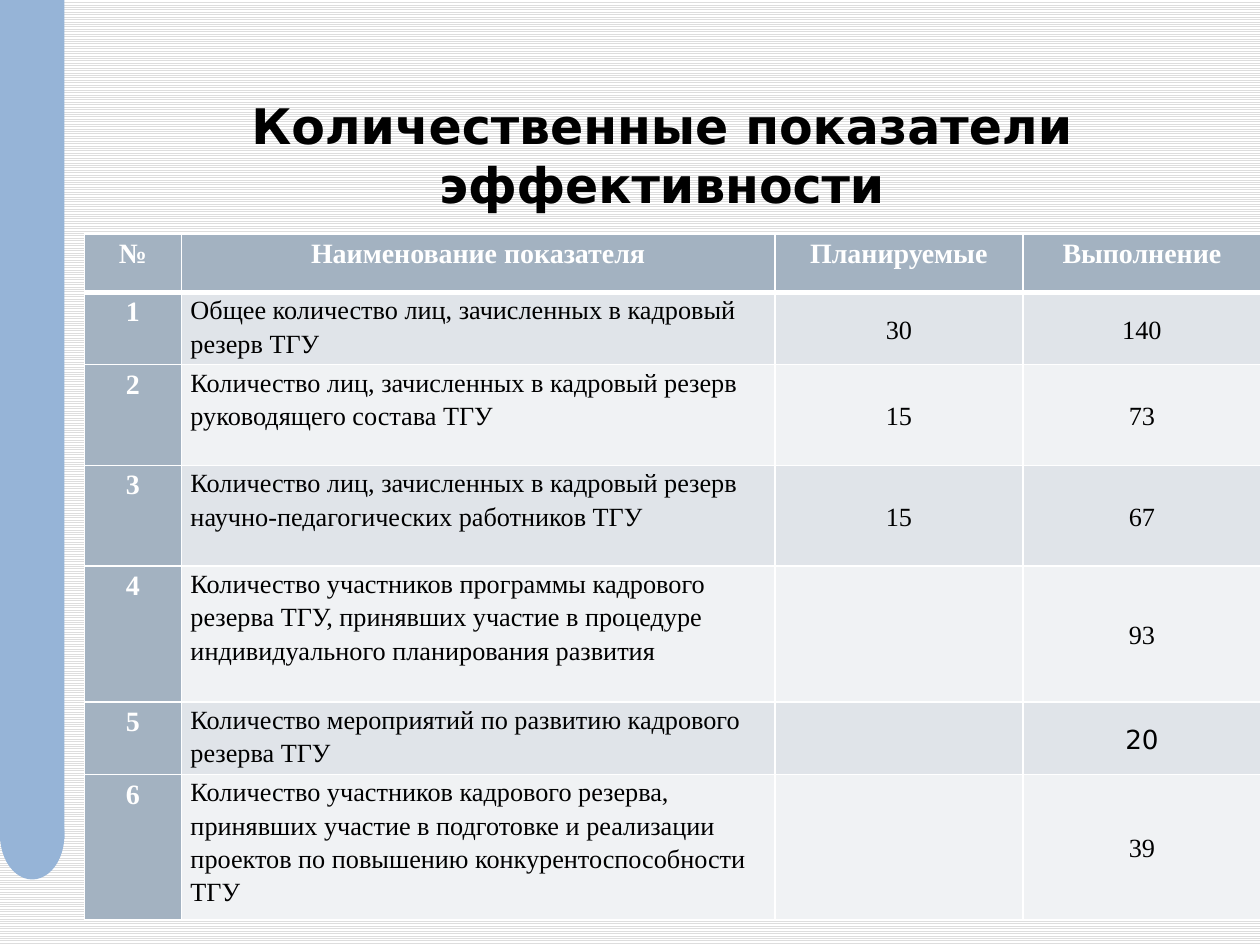
from lxml import etree
from pptx import Presentation
from pptx.dml.color import RGBColor
from pptx.enum.dml import MSO_PATTERN
from pptx.enum.shapes import MSO_CONNECTOR, MSO_SHAPE
from pptx.enum.text import MSO_ANCHOR, PP_ALIGN
from pptx.oxml.ns import qn
from pptx.util import Cm, Pt

RECTANGLE, OVAL = MSO_SHAPE.RECTANGLE, MSO_SHAPE.OVAL
STRAIGHT = MSO_CONNECTOR.STRAIGHT
LEFT, CENTER = PP_ALIGN.LEFT, PP_ALIGN.CENTER
TOP, MIDDLE, BOTTOM = MSO_ANCHOR.TOP, MSO_ANCHOR.MIDDLE, MSO_ANCHOR.BOTTOM
LIGHT_HORIZONTAL = MSO_PATTERN.LIGHT_HORIZONTAL

HEADERS = ["№", "Наименование показателя", "Планируемые", "Выполнение"]
INDICATORS = [
    ("Общее количество лиц, зачисленных в кадровый резерв ТГУ", "30", "140"),
    ("Количество лиц, зачисленных в кадровый резерв руководящего состава ТГУ", "15", "73"),
    ("Количество лиц, зачисленных в кадровый резерв научно-педагогических работников ТГУ",
     "15", "67"),
    ("Количество участников программы кадрового резерва ТГУ, принявших участие "
     "в процедуре индивидуального планирования развития", "", "93"),
    ("Количество мероприятий по развитию кадрового резерва ТГУ", "", "20"),
    ("Количество участников кадрового резерва, принявших участие в подготовке и "
     "реализации проектов по повышению конкурентоспособности ТГУ", "", "39"),
]
COLUMN_WIDTHS = [1.96, 11.96, 5, 4.8]
ROW_HEIGHTS = [1.17, 1.35, 2.03, 2.03, 2.74, 1.35, 2.74]


def color(value):
    return RGBColor.from_string(value)


class SlideBuilder:
    title_font = "DejaVu Sans"
    table_font = "Times New Roman"
    black, white = "000000", "FFFFFF"
    accent, rule = "96B4D7", "003366"
    heading_fill = "A3B2C1"
    band_fills = ["F0F2F4", "E0E4E9"]

    def __init__(self, slide):
        self.slide = slide

    def background(self):
        fill = self.slide.background.fill
        fill.patterned()
        fill.pattern = LIGHT_HORIZONTAL
        fill.fore_color.rgb = color("DDDDDD")
        fill.back_color.rgb = color(self.white)

    def shape(self, kind, left, top, width, height):
        shape = self.slide.shapes.add_shape(kind, Cm(left), Cm(top), Cm(width), Cm(height))
        shape.shadow.inherit = False
        shape.fill.solid()
        shape.fill.fore_color.rgb = color(self.accent)
        shape.line.fill.background()

    def horizontal_line(self, left, right, y):
        connector = self.slide.shapes.add_connector(STRAIGHT, Cm(left), Cm(y), Cm(right), Cm(y))
        connector.line.color.rgb = color(self.rule)
        connector.line.width = Pt(0.25)
        etree.SubElement(connector._element.spPr, qn("a:effectLst"))

    def set_text(self, paragraph, text, size, font, text_color, bold, alignment=CENTER):
        paragraph.text = text
        paragraph.alignment = alignment
        paragraph.font.size = Pt(size)
        paragraph.font.name = font
        paragraph.font.bold = bold
        paragraph.font.color.rgb = color(text_color)

    def title(self, text, left, top, width, height):
        box = self.slide.shapes.add_textbox(Cm(left), Cm(top), Cm(width), Cm(height))
        frame = box.text_frame
        frame.word_wrap = True
        frame.vertical_anchor = BOTTOM
        self.set_text(frame.paragraphs[0], text, 28, self.title_font, self.black, True)

    def borders(self, cell, top, bottom):
        """Draw white cell borders; top and bottom are widths in points."""
        properties = cell._tc.get_or_add_tcPr()
        for side, width in (("L", 1), ("R", 1), ("T", top), ("B", bottom)):
            line = etree.SubElement(properties, qn(f"a:ln{side}"), w=str(Pt(width)))
            fill = etree.SubElement(line, qn("a:solidFill"))
            etree.SubElement(fill, qn("a:srgbClr"), val=self.white)

    def cell(self, cell, text, row, column):
        is_heading = row == 0 or column == 0
        self.borders(cell, 3 if row == 1 else 1, 3 if row == 0 else 1)
        cell.fill.solid()
        cell.fill.fore_color.rgb = color(
            self.heading_fill if is_heading else self.band_fills[row % 2])
        if not text:
            return
        cell.margin_left = cell.margin_right = Cm(0.18)
        cell.margin_top = cell.margin_bottom = 0
        cell.vertical_anchor = TOP if is_heading or column == 1 else MIDDLE
        paragraph = cell.text_frame.paragraphs[0]
        paragraph.line_spacing = 1.15
        paragraph.space_after = Pt(10)
        if is_heading:
            self.set_text(paragraph, text, 16, self.table_font, self.white, True)
        else:
            font = self.title_font if text == "20" else self.table_font
            self.set_text(paragraph, text, 15, font, self.black, False,
                          LEFT if column == 1 else CENTER)

    def table(self, rows, left, top):
        table = self.slide.shapes.add_table(
            len(rows), len(COLUMN_WIDTHS), Cm(left), Cm(top),
            Cm(sum(COLUMN_WIDTHS)), Cm(sum(ROW_HEIGHTS))).table
        for column, width in zip(table.columns, COLUMN_WIDTHS):
            column.width = Cm(width)
        for row, height in zip(table.rows, ROW_HEIGHTS):
            row.height = Cm(height)
        for row, texts in enumerate(rows):
            for column, text in enumerate(texts):
                self.cell(table.cell(row, column), text, row, column)


def main():
    presentation = Presentation()
    presentation.slide_width, presentation.slide_height = Cm(25.4), Cm(19.05)
    builder = SlideBuilder(presentation.slides.add_slide(presentation.slide_layouts[6]))
    builder.background()
    builder.horizontal_line(1.7, 23.7, 18.14)
    builder.shape(RECTANGLE, 0, 0, 1.3, 16.92)
    builder.shape(OVAL, 0, 15.93, 1.3, 1.8)
    builder.title("Количественные показатели эффективности", 1.7, 1.93, 23.28, 2.49)
    numbered = [(str(number), *texts) for number, texts in enumerate(INDICATORS, 1)]
    builder.table([HEADERS, *numbered], 1.7, 4.72)
    presentation.save("out.pptx")


if __name__ == "__main__":
    main()
